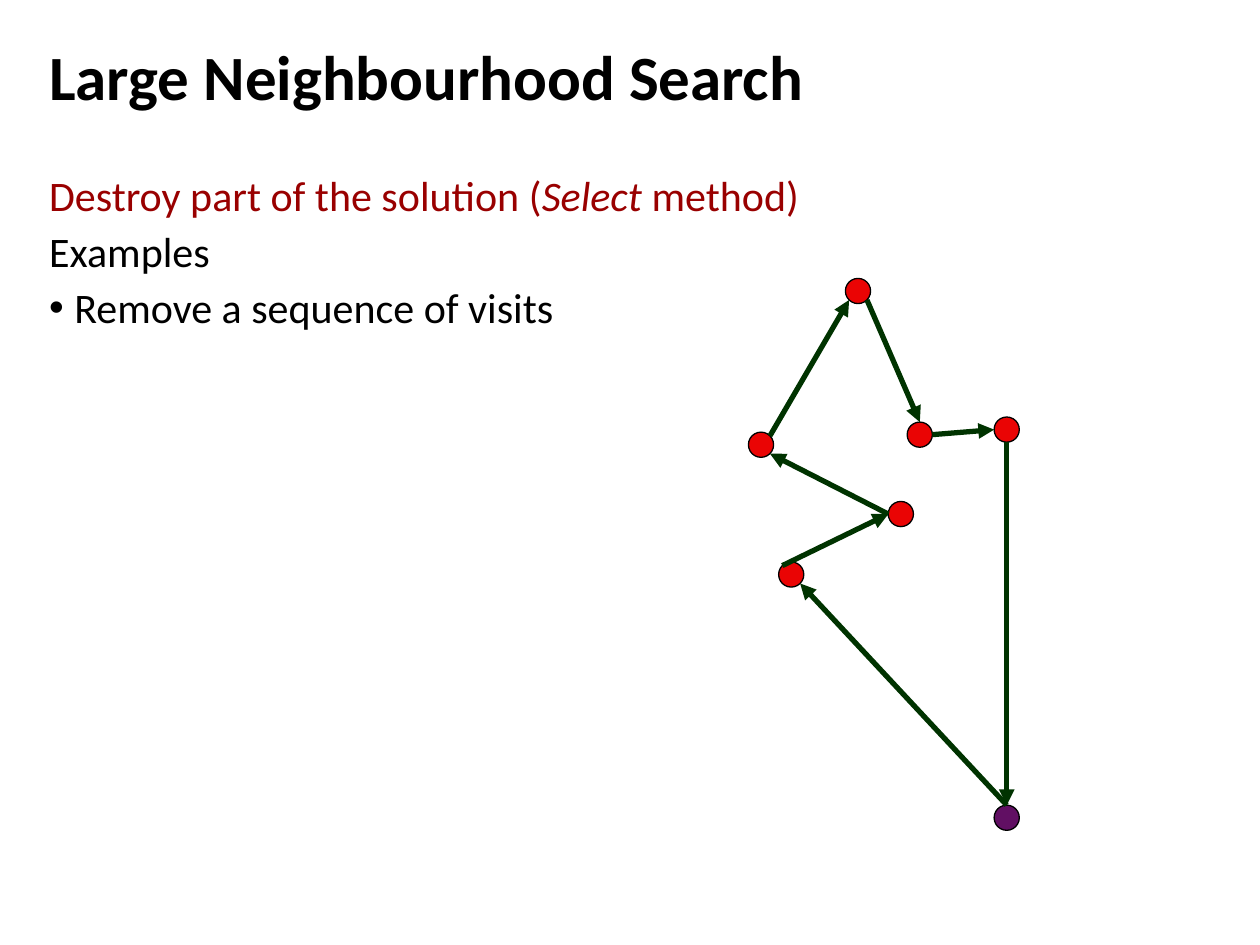
from math import hypot

from lxml import etree
from pptx import Presentation
from pptx.dml.color import RGBColor
from pptx.enum.shapes import MSO_CONNECTOR, MSO_SHAPE
from pptx.enum.text import MSO_ANCHOR, MSO_AUTO_SIZE, PP_ALIGN
from pptx.oxml.ns import qn
from pptx.util import Inches, Pt

STRAIGHT = MSO_CONNECTOR.STRAIGHT
OVAL = MSO_SHAPE.OVAL
TOP = MSO_ANCHOR.TOP
NO_AUTOFIT = MSO_AUTO_SIZE.NONE
LEFT = PP_ALIGN.LEFT

FONT = "Calibri"
BLACK = "000000"
HEADING_RED = "990000"
VISIT_RED = "EA0404"
DEPOT_PURPLE = "610F63"
ROUTE_GREEN = "003300"

NODE_SIZE = 0.2
TITLE_BOX = (0.39, 0.3, 7.68, 0.93)
BODY_BOX = (0.39, 1.39, 9.25, 5)
TOUR_BOX = (5.94, 2.21, 2.15, 4.38)

# Left and top of each node, in inches within the tour box
NODES = {
    "depot": (1.95, 4.18),
    "visit 1": (0.24, 2.25),
    "visit 2": (1.11, 1.77),
    "visit 3": (0, 1.22),
    "visit 4": (0.77, 0),
    "visit 5": (1.26, 1.14),
    "visit 6": (1.95, 1.1),
}

# Direction from a node's centre to the point where a leg touches it
SIDES = {
    "top": (0, -1),
    "left": (-1, 0),
    "bottom": (0, 1),
    "right": (1, 0),
    "top left": (-1, -1),
    "top right": (1, -1),
    "bottom left": (-1, 1),
    "bottom right": (1, 1),
}

LEGS = [
    ("depot", "top", "visit 1", "bottom right"),
    ("visit 1", "top left", "visit 2", "left"),
    ("visit 2", "left", "visit 3", "bottom right"),
    ("visit 3", "top right", "visit 4", "bottom left"),
    ("visit 4", "bottom right", "visit 5", "top"),
    ("visit 5", "right", "visit 6", "left"),
    ("visit 6", "bottom", "depot", "top"),
]


def color(hex_value):
    return RGBColor.from_string(hex_value)


def set_font(font, size, hex_value, bold=False):
    font.name = FONT
    font.size = Pt(size)
    font.bold = bold
    font.color.rgb = color(hex_value)


def prepare_frame(text_frame):
    """Wrap text from the top of a frame without margins."""
    text_frame.word_wrap = True
    text_frame.auto_size = NO_AUTOFIT
    text_frame.vertical_anchor = TOP
    text_frame.margin_left = text_frame.margin_right = 0
    text_frame.margin_top = text_frame.margin_bottom = 0


def place_title(slide, box):
    title = slide.shapes.title
    title.left, title.top, title.width, title.height = map(Inches, box)
    prepare_frame(title.text_frame)
    title.text_frame.text = "Large Neighbourhood Search"
    paragraph = title.text_frame.paragraphs[0]
    paragraph.alignment = LEFT
    set_font(paragraph.font, 36, BLACK, bold=True)


def indent(paragraph, bullet=None):
    properties = paragraph._p.get_or_add_pPr()
    properties.set("marL", str(Inches(0.2)))
    properties.set("indent", str(-Inches(0.2)))
    if bullet:
        etree.SubElement(properties, qn("a:buFont"), typeface="Arial")
        etree.SubElement(properties, qn("a:buChar"), char=bullet)


def add_body(slide, box):
    text_frame = slide.shapes.add_textbox(*map(Inches, box)).text_frame
    prepare_frame(text_frame)

    heading = text_frame.paragraphs[0]
    for text, italic in (
        ("Destroy part of the solution (", False),
        ("Select", True),
        (" method)", False),
    ):
        run = heading.add_run()
        run.text = text
        run.font.italic = italic
    heading.line_spacing = 0.9
    set_font(heading.font, 24, HEADING_RED)

    for text, bullet in (("Examples", None), ("Remove a sequence of visits", "•")):
        paragraph = text_frame.add_paragraph()
        paragraph.text = text
        paragraph.line_spacing = 0.9
        paragraph.space_before = Pt(6)
        indent(paragraph, bullet)
        set_font(paragraph.font, 24, BLACK)


def add_node(slide, left, top, fill):
    node = slide.shapes.add_shape(
        OVAL, Inches(left), Inches(top), Inches(NODE_SIZE), Inches(NODE_SIZE)
    )
    node.shadow.inherit = False
    node.fill.solid()
    node.fill.fore_color.rgb = color(fill)
    node.line.color.rgb = color(BLACK)
    node.line.width = Pt(0.75)


def touch_point(position, side):
    """Return the point on a node's rim that faces the given side."""
    radius = NODE_SIZE / 2
    direction = SIDES[side]
    length = hypot(*direction)
    return [
        start + radius + radius * step / length
        for start, step in zip(position, direction)
    ]


def add_leg(slide, begin, end):
    leg = slide.shapes.add_connector(STRAIGHT, *map(Inches, (*begin, *end)))
    leg.line.color.rgb = color(ROUTE_GREEN)
    leg.line.width = Pt(3)
    etree.SubElement(leg.line._get_or_add_ln(), qn("a:tailEnd"), type="triangle")
    etree.SubElement(leg._element.spPr, qn("a:effectLst"))


def add_tour(slide, box):
    left, top = box[:2]
    positions = {name: (left + x, top + y) for name, (x, y) in NODES.items()}
    for name, position in positions.items():
        add_node(slide, *position, DEPOT_PURPLE if name == "depot" else VISIT_RED)
    for origin, origin_side, target, target_side in LEGS:
        add_leg(
            slide,
            touch_point(positions[origin], origin_side),
            touch_point(positions[target], target_side),
        )


def main():
    presentation = Presentation()
    presentation.slide_width = Inches(10)
    presentation.slide_height = Inches(7.5)
    slide = presentation.slides.add_slide(presentation.slide_layouts[5])
    place_title(slide, TITLE_BOX)
    add_body(slide, BODY_BOX)
    add_tour(slide, TOUR_BOX)
    presentation.save("out.pptx")


if __name__ == "__main__":
    main()
